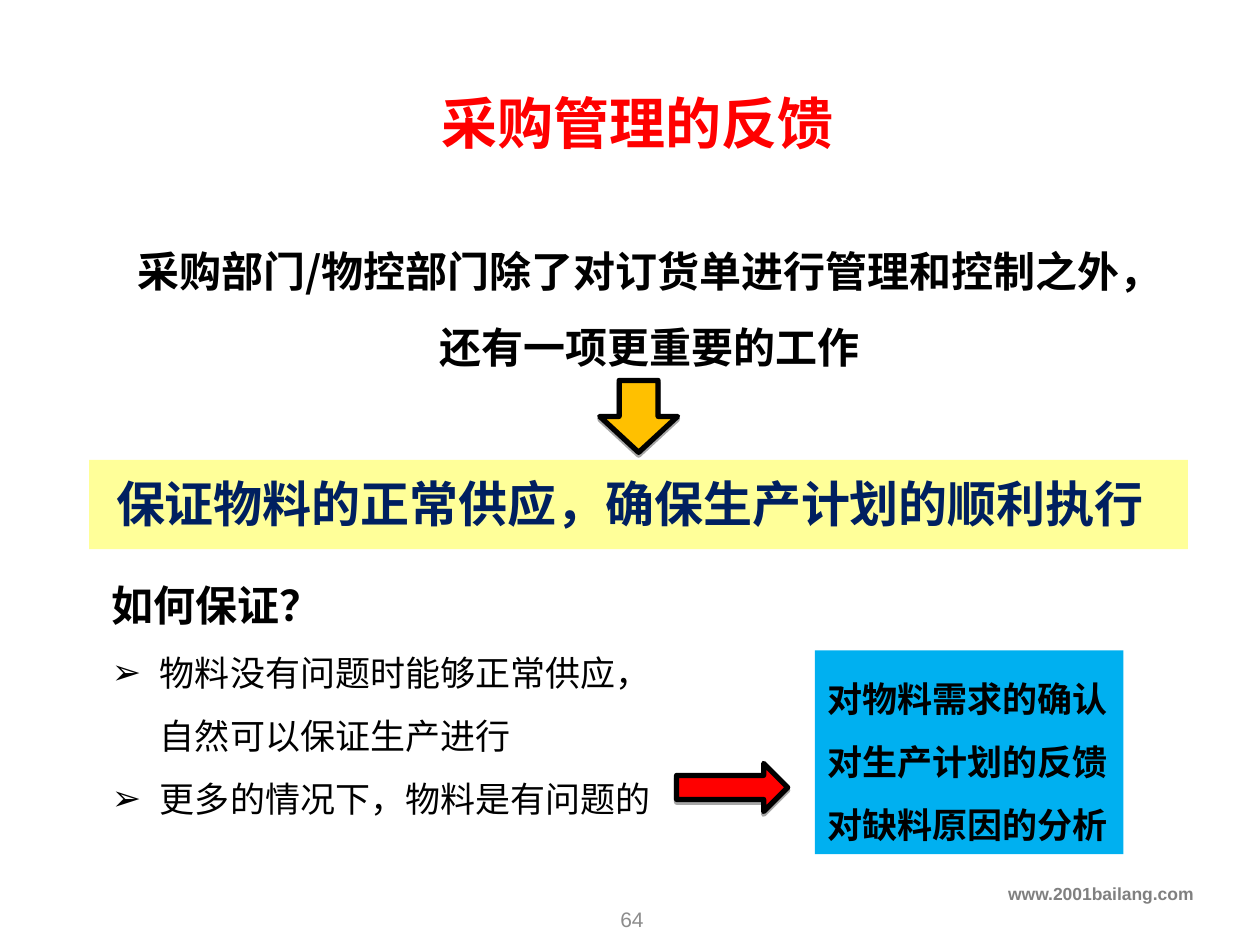
import pptx
import pptx.util
import pptx.dml.color
import pptx.enum.shapes
import pptx.enum.text
import pptx.oxml
import pptx.oxml.ns
from lxml import etree

Cm = pptx.util.Cm
Pt = pptx.util.Pt
ALIGN = pptx.enum.text.PP_ALIGN
ANCHOR = pptx.enum.text.MSO_ANCHOR
SHAPE = pptx.enum.shapes.MSO_SHAPE
CJK = "Noto Sans CJK SC"
COLORS = {
    "black": "000000", "red": "FF0000", "navy": "002060", "yellow": "FFFF99",
    "amber": "FFC000", "blue": "00B0F0", "gray": "808080", "light gray": "8C8C8C",
}
TITLE = "采购管理的反馈"
STATEMENT = "采购部门/物控部门除了对订货单进行管理和控制之外，还有一项更重要的工作"
GOAL = "保证物料的正常供应，确保生产计划的顺利执行"
QUESTION = "如何保证？"
ANSWERS = ["物料没有问题时能够正常供应，自然可以保证生产进行", "更多的情况下，物料是有问题的"]
ACTIONS = ["对物料需求的确认", "对生产计划的反馈", "对缺料原因的分析"]
WEBSITE = "www.2001bailang.com"
PAGE_NUMBER = "64"
BOXES = {
    "title": (8.61, 1.65, 8.48, 1.63),
    "statement": (2.49, 4.32, 21.21, 3.15),
    "goal": (1.8, 9.27, 22.15, 1.8),
    "down arrow": (12.09, 7.67, 1.57, 1.45),
    "body": (2, 11.05, 11.42, 5.64),
    "right arrow": (13.64, 15.39, 2.24, 0.97),
    "actions": (16.43, 13.11, 6.22, 4.11),
    "website": (0, 17.68, 24.31, 0.89),
    "page number": (9.88, 18.01, 5.72, 1.02),
}


def rgb(color):
    return pptx.dml.color.RGBColor.from_string(COLORS[color])


def place(shape, name):
    shape.left, shape.top, shape.width, shape.height = map(Cm, BOXES[name])


def write(shape, lines, size, color="black", bold=True, font=CJK,
          align=ALIGN.LEFT, anchor=ANCHOR.TOP, spacing=1, wrap=True):
    frame = shape.text_frame
    frame.text = "\n".join(lines)
    frame.word_wrap = wrap
    frame.auto_size = pptx.enum.text.MSO_AUTO_SIZE.NONE
    frame.vertical_anchor = anchor
    for paragraph in frame.paragraphs:
        paragraph.alignment = align
        paragraph.line_spacing = spacing
        paragraph.space_before = Pt(0)
        for run in paragraph.runs:
            run.font.size = Pt(size)
            run.font.bold = bold
            run.font.color.rgb = rgb(color)
            run.font.name = font
            etree.SubElement(run.font._element, pptx.oxml.ns.qn("a:ea"), typeface=font)


def add_text(slide, name, lines, size, **style):
    shape = slide.shapes.add_textbox(*map(Cm, BOXES[name]))
    write(shape, lines, size, **style)


def add_filled(slide, name, kind, fill):
    shape = slide.shapes.add_shape(kind, *map(Cm, BOXES[name]))
    shape.shadow.inherit = False
    shape.fill.solid()
    shape.fill.fore_color.rgb = rgb(fill)
    shape.line.fill.background()
    return shape


def add_arrow(slide, name, kind, fill):
    shape = add_filled(slide, name, kind, fill)
    shape.line.color.rgb = rgb("black")
    shape.line.width = Pt(3)
    effects = shape._element.spPr.find(pptx.oxml.ns.qn("a:effectLst"))
    effects.append(pptx.oxml.parse_xml(
        f'<a:outerShdw {pptx.oxml.ns.nsdecls("a")} dist="{Pt(1.6)}" dir="5400000">'
        f'<a:srgbClr val="{COLORS["black"]}"><a:alpha val="34000"/></a:srgbClr></a:outerShdw>'))


def set_bullet(paragraph, character, indent):
    properties = paragraph._p.get_or_add_pPr()
    properties.set("marL", str(Cm(indent)))
    properties.set("indent", str(-Cm(indent)))
    tag = pptx.oxml.ns.qn("a:buChar" if character else "a:buNone")
    bullet = etree.SubElement(properties, tag)
    if character:
        bullet.set("char", character)


def main():
    """Build the slide on purchasing feedback."""
    presentation = pptx.Presentation()
    presentation.slide_width, presentation.slide_height = Cm(25.4), Cm(19.05)
    slide = presentation.slides.add_slide(presentation.slide_layouts[1])
    title, body = slide.placeholders

    place(title, "title")
    write(title, [TITLE], 32, color="red", align=ALIGN.CENTER, anchor=ANCHOR.MIDDLE, wrap=False)
    add_text(slide, "statement", [STATEMENT], 24, align=ALIGN.CENTER, spacing=1.5)

    goal = add_filled(slide, "goal", SHAPE.RECTANGLE, "yellow")
    write(goal, [GOAL], 28, color="navy", wrap=False)
    goal.text_frame.margin_left = Cm(0.54)
    goal.text_frame.margin_top = Cm(0.28)
    add_arrow(slide, "down arrow", SHAPE.DOWN_ARROW, "amber")

    place(body, "body")
    write(body, [QUESTION] + ANSWERS, 20, bold=False, spacing=1.5)
    question, *answers = body.text_frame.paragraphs
    question.runs[0].font.size = Pt(24)
    question.runs[0].font.bold = True
    set_bullet(question, None, 0)
    for answer in answers:
        set_bullet(answer, "➢", 0.97)

    add_arrow(slide, "right arrow", SHAPE.RIGHT_ARROW, "red")
    actions = add_filled(slide, "actions", SHAPE.RECTANGLE, "blue")
    write(actions, ACTIONS, 20, spacing=1.5, wrap=False)

    add_text(slide, "website", [WEBSITE], 10, color="gray", font="Arial", align=ALIGN.RIGHT)
    add_text(slide, "page number", [PAGE_NUMBER], 12, color="light gray", bold=False,
             font="Arial", align=ALIGN.CENTER, anchor=ANCHOR.MIDDLE)
    presentation.save("out.pptx")


if __name__ == "__main__":
    main()
